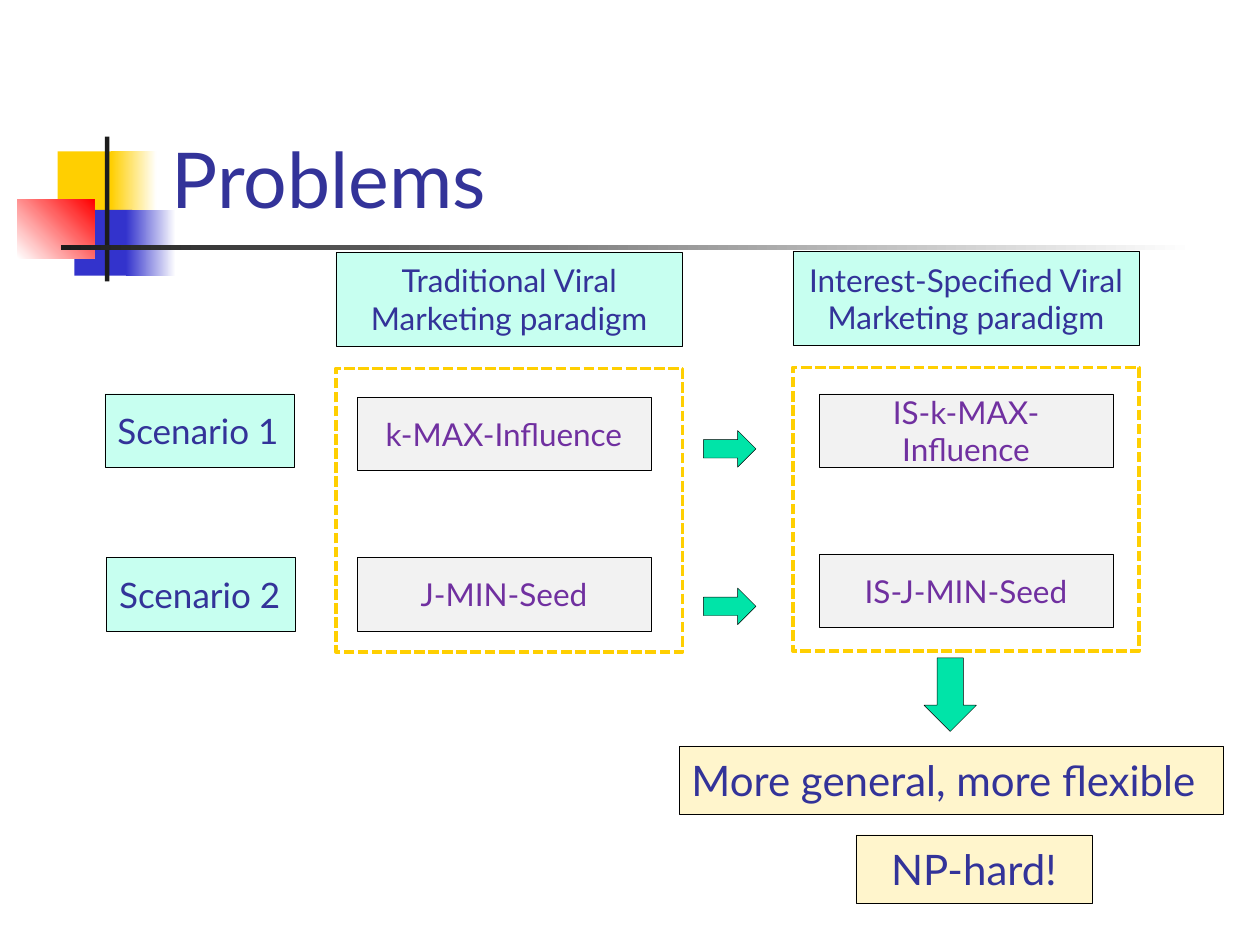
from pptx import Presentation
from pptx.util import Pt
from pptx.dml.color import RGBColor
from pptx.enum.dml import MSO_LINE
from pptx.enum.shapes import MSO_SHAPE
from pptx.enum.text import MSO_ANCHOR, PP_ALIGN

FONT = "Lato"
WHITE = RGBColor(0xFF, 0xFF, 0xFF)
BLACK = RGBColor(0x00, 0x00, 0x00)
CHARCOAL = RGBColor(0x1C, 0x1C, 0x1C)
GOLD = RGBColor(0xFF, 0xCF, 0x01)
BLUE = RGBColor(0x33, 0x33, 0xCC)
RED = RGBColor(0xFF, 0x00, 0x00)
NAVY = RGBColor(0x33, 0x33, 0x99)
PURPLE = RGBColor(0x70, 0x30, 0xA0)
MINT = RGBColor(0xC7, 0xFF, 0xF0)
GRAY = RGBColor(0xF2, 0xF2, 0xF2)
CREAM = RGBColor(0xFF, 0xF5, 0xCC)
GREEN = RGBColor(0x00, 0xE4, 0xA8)

ROW_PITCH = 91.5
CELL_H = 42


def add_shape(s, box, fill=None, line=None, width=0.25, kind=MSO_SHAPE.RECTANGLE):
    sp = s.shapes.add_shape(kind, *[Pt(v) for v in box])
    sp.shadow.inherit = False
    if fill is None:
        sp.fill.background()
    else:
        sp.fill.solid()
        sp.fill.fore_color.rgb = fill
    if line is None:
        sp.line.fill.background()
    else:
        sp.line.color.rgb = line
        sp.line.width = Pt(width)
    return sp


def add_fade(s, box, start, end, angle=0):
    sp = add_shape(s, box)
    sp.fill.gradient()
    sp.fill.gradient_angle = angle
    for stop, color, position in zip(sp.fill.gradient_stops, (start, end), (0, 1)):
        stop.color.rgb = color
        stop.position = position


def write(sp, text, size, color, align, anchor=MSO_ANCHOR.MIDDLE):
    tf = sp.text_frame
    tf.word_wrap = True
    tf.vertical_anchor = anchor
    p = tf.paragraphs[0]
    p.text = text
    p.alignment = align
    font = p.runs[0].font
    font.name, font.size, font.color.rgb = FONT, Pt(size), color


def add_label(s, box, text, fill, size, color=NAVY, align=PP_ALIGN.CENTER):
    write(add_shape(s, box, fill, BLACK), text, size, color, align)


def add_ornament(s, x, y):
    add_shape(s, (x + 23, y + 8.5, 34.5, 37.5), GOLD)
    add_fade(s, (x + 53.5, y + 8.5, 26, 37.5), GOLD, WHITE)
    add_shape(s, (x + 32.5, y + 42, 33, 37.5), BLUE)
    add_fade(s, (x + 62, y + 42, 28.5, 37.5), BLUE, WHITE)
    add_fade(s, (x, y + 36, 44, 33.5), WHITE, RED, 45)
    add_shape(s, (x + 50, y, 2.5, 82.8), CHARCOAL)
    add_fade(s, (x + 25, y + 62.3, 648, 2.5), CHARCOAL, WHITE)


def add_title(s, x, y, w, h, text):
    sp = s.shapes.add_textbox(Pt(x), Pt(y), Pt(w), Pt(h))
    write(sp, text, 44, NAVY, PP_ALIGN.LEFT, MSO_ANCHOR.BOTTOM)


def add_scenarios(s, x, y, w):
    for i in range(2):
        box = (x + i, y + i * (ROW_PITCH + 2), w, CELL_H)
        add_label(s, box, f"Scenario {i + 1}", MINT, 20, align=PP_ALIGN.LEFT)


def add_paradigm(s, x, y, w, heading, problems, inset, drop):
    for i, problem in enumerate(problems):
        box = (x + inset, y + drop + i * ROW_PITCH, 168, CELL_H)
        add_label(s, box, problem, GRAY, 18, PURPLE)
    frame = add_shape(s, (x, y + 66.5, w, 162), None, GOLD, 2)
    frame.line.dash_style = MSO_LINE.SQUARE_DOT
    add_label(s, (x, y, w, 54), heading, MINT, 18)


def add_row_arrows(s, x, y):
    for i in range(2):
        box = (x, y + i * 90, 30, 21)
        add_shape(s, box, GREEN, BLACK, kind=MSO_SHAPE.RIGHT_ARROW)


def add_conclusions(s, x, y, w):
    add_shape(s, (x + 140, y, 30, CELL_H), GREEN, BLACK, kind=MSO_SHAPE.DOWN_ARROW)
    add_label(s, (x, y + 50.3, w, 39), "More general, more flexible", CREAM, 24,
              align=PP_ALIGN.LEFT)
    add_label(s, (x + 101, y + 101, 135, 39), "NP-hard!", CREAM, 24)


def main():
    prs = Presentation()
    prs.slide_width, prs.slide_height = Pt(720), Pt(540)
    s = prs.slides.add_slide(prs.slide_layouts[6])
    add_ornament(s, 10, 78)
    add_title(s, 91, 16.5, 613, 115, "Problems")
    add_scenarios(s, 60, 225, 108)
    add_paradigm(s, 192, 144, 198, "Traditional Viral Marketing paradigm",
                 ("k-MAX-Influence", "J-MIN-Seed"), 12, 83)
    add_paradigm(s, 453, 143.5, 198, "Interest-Specified Viral Marketing paradigm",
                 ("IS-k-MAX-Influence", "IS-J-MIN-Seed"), 15, 81.5)
    add_row_arrows(s, 402, 246)
    add_conclusions(s, 388, 376, 311)
    prs.save("out.pptx")


if __name__ == "__main__":
    main()
